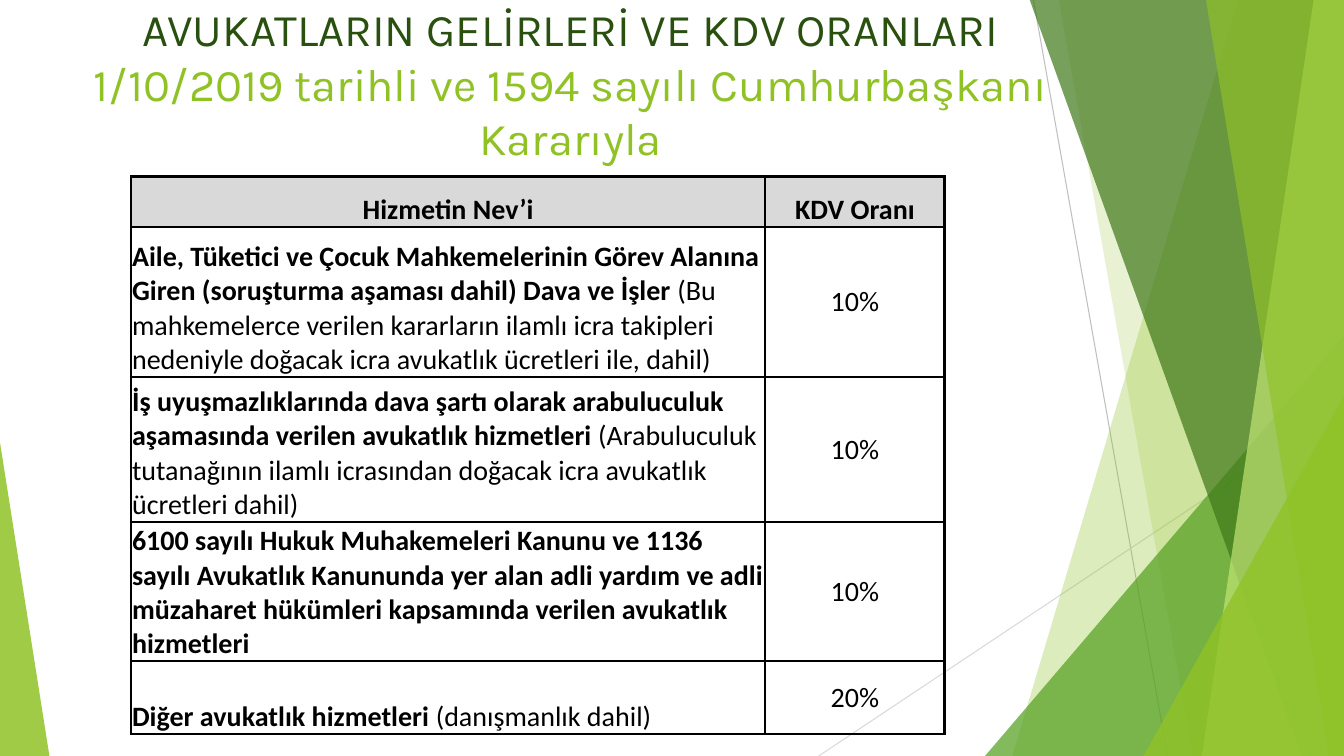
import pptx
import pptx.dml.color
import pptx.enum.shapes
import pptx.enum.text
import pptx.oxml.ns
import pptx.oxml.xmlchemy
import pptx.util

RGBColor = pptx.dml.color.RGBColor
PP_ALIGN = pptx.enum.text.PP_ALIGN
ANCHOR = pptx.enum.text.MSO_ANCHOR

PX = 9144  # 100 px to the inch
WIDTH, HEIGHT = 1333, 750

BLACK = RGBColor(0x00, 0x00, 0x00)
HEADER_GREY = RGBColor(0xD9, 0xD9, 0xD9)
LINE_GREY = RGBColor(0xBF, 0xBF, 0xBF)
LIME = RGBColor(0x90, 0xC2, 0x26)
PALE_LIME = RGBColor(0xC0, 0xE4, 0x74)
GREEN = RGBColor(0x54, 0xA0, 0x21)
FOREST = RGBColor(0x3F, 0x78, 0x19)
DARK_GREEN = RGBColor(0x2A, 0x50, 0x10)

# Content
TITLE_BOX = (74, 0, 984, 165)
TITLE = [
    ("AVUKATLARIN GELİRLERİ VE KDV ORANLARI", DARK_GREEN),
    ("1/10/2019 tarihli ve 1594 sayılı Cumhurbaşkanı Kararıyla", LIME),
]

TABLE_LEFT, TABLE_TOP = 130, 175
COLUMN_WIDTHS = [629, 178]
ROW_HEIGHTS = [50, 149, 144, 138, 72]
HEADER = ("Hizmetin Nev’i", "KDV Oranı")
# Bold part, plain part, rate
SERVICES = [
    ("Aile, Tüketici ve Çocuk Mahkemelerinin Görev Alanına Giren "
     "(soruşturma aşaması dahil) Dava ve İşler ",
     "(Bu mahkemelerce verilen kararların ilamlı icra takipleri nedeniyle "
     "doğacak icra avukatlık ücretleri ile, dahil)", "10%"),
    ("İş uyuşmazlıklarında dava şartı olarak arabuluculuk aşamasında "
     "verilen avukatlık hizmetleri ",
     "(Arabuluculuk tutanağının ilamlı icrasından doğacak icra avukatlık "
     "ücretleri dahil)", "10%"),
    ("6100 sayılı Hukuk Muhakemeleri Kanunu ve 1136 sayılı Avukatlık "
     "Kanununda yer alan adli yardım ve adli müzaharet hükümleri kapsamında "
     "verilen avukatlık hizmetleri", "", "10%"),
    ("Diğer avukatlık hizmetleri ", "(danışmanlık dahil)", "20%"),
]

# Decoration: start, end, colour
LINES = [
    ((1025, 0), (1158, HEIGHT), LINE_GREY),
    ((WIDTH, 403), (812, HEIGHT), HEADER_GREY),
]
# Bands reach the right edge: top x, bottom x, colour, opacity in percent
# Triangles stand on the bottom edge: left, top, width, apex, colour, opacity
FACETS = [
    ("band", (1228, 1004), LIME, 30),
    ("band", (1050, 1183), LIME, 20),
    ("triangle", (977, 333, 356, 1), GREEN, 72),
    ("band", (1021, 1291), FOREST, 70),
    ("band", (1303, 1192), PALE_LIME, 70),
    ("band", (1196, 1318), LIME, 65),
    ("triangle", (1134, 393, 199, 1), LIME, 80),
    ("triangle", (0, 439, 49, 0), LIME, 85),
]


def px(*lengths):
    return [pptx.util.Emu(length * PX) for length in lengths]


def new_element(tag, **attributes):
    element = pptx.oxml.xmlchemy.OxmlElement(tag)
    for name, value in attributes.items():
        element.set(name, str(value))
    return element


def add_text(paragraph, text, font="Calibri", size=20, color=BLACK,
             bold=False, align=PP_ALIGN.LEFT):
    paragraph.alignment = align
    run = paragraph.add_run()
    run.text = text
    run.font.name = font
    run.font.size = pptx.util.Pt(size)
    run.font.color.rgb = color
    run.font.bold = bold


def add_line(slide, start, end, color):
    line = slide.shapes.add_connector(
        pptx.enum.shapes.MSO_CONNECTOR.STRAIGHT, *px(*start, *end))
    line.line.color.rgb = color
    line.line.width = pptx.util.Pt(0.75)
    line.element.spPr.append(new_element("a:effectLst"))


def add_facet(slide, kind, geometry, color, opacity):
    if kind == "band":
        top_x, bottom_x = geometry
        builder = slide.shapes.build_freeform(top_x, -1, scale=PX)
        builder.add_line_segments(
            [(WIDTH, -1), (WIDTH, HEIGHT), (bottom_x, HEIGHT)], close=True)
        shape = builder.convert_to_shape()
    else:
        left, top, width, apex = geometry
        shape = slide.shapes.add_shape(
            pptx.enum.shapes.MSO_SHAPE.ISOSCELES_TRIANGLE,
            *px(left, top, width, HEIGHT - top))
        shape.adjustments[0] = apex
    shape.shadow.inherit = False
    shape.line.fill.background()
    shape.fill.solid()
    shape.fill.fore_color.rgb = color
    color_element = shape.element.spPr.find(".//" + pptx.oxml.ns.qn("a:srgbClr"))
    color_element.append(new_element("a:alpha", val=opacity * 1000))


def format_cell(cell, anchor, fill=None):
    cell.vertical_anchor = anchor
    cell.margin_left, cell.margin_right, cell.margin_top, cell.margin_bottom = px(1, 1, 1, 0)
    properties = cell._tc.get_or_add_tcPr()
    for side in ("a:lnL", "a:lnR", "a:lnT", "a:lnB"):
        border = new_element(side, w=int(pptx.util.Pt(2)))
        solid = new_element("a:solidFill")
        solid.append(new_element("a:srgbClr", val=BLACK))
        border.append(solid)
        properties.append(border)
    if fill is None:
        cell.fill.background()
    else:
        cell.fill.solid()
        cell.fill.fore_color.rgb = fill
    return cell.text_frame.paragraphs[0]


def add_title(slide):
    title = slide.shapes.title
    title.element.getparent().append(title.element)  # in front of the facets
    title.left, title.top, title.width, title.height = px(*TITLE_BOX)
    frame = title.text_frame
    frame.word_wrap = True
    frame.auto_size = pptx.enum.text.MSO_AUTO_SIZE.NONE
    frame.vertical_anchor = ANCHOR.MIDDLE
    paragraph = frame.paragraphs[0]
    for index, (text, color) in enumerate(TITLE):
        if index:
            paragraph.add_line_break()
        add_text(paragraph, text, font="Karla", size=32.4, color=color,
                 align=PP_ALIGN.CENTER)


def add_rate_table(slide):
    table = slide.shapes.add_table(
        len(ROW_HEIGHTS), len(COLUMN_WIDTHS),
        *px(TABLE_LEFT, TABLE_TOP, sum(COLUMN_WIDTHS), sum(ROW_HEIGHTS))).table
    for column, width in zip(table.columns, px(*COLUMN_WIDTHS)):
        column.width = width
    for row, height in zip(table.rows, px(*ROW_HEIGHTS)):
        row.height = height
    for index, text in enumerate(HEADER):
        paragraph = format_cell(table.cell(0, index), ANCHOR.BOTTOM, HEADER_GREY)
        add_text(paragraph, text, bold=True, align=PP_ALIGN.CENTER)
    for index, (service, detail, rate) in enumerate(SERVICES, start=1):
        paragraph = format_cell(table.cell(index, 0), ANCHOR.BOTTOM)
        add_text(paragraph, service, bold=True)
        if detail:
            add_text(paragraph, detail)
        paragraph = format_cell(table.cell(index, 1), ANCHOR.MIDDLE)
        add_text(paragraph, rate, align=PP_ALIGN.CENTER)


def main():
    presentation = pptx.Presentation()
    presentation.slide_width, presentation.slide_height = px(WIDTH, HEIGHT)
    slide = presentation.slides.add_slide(presentation.slide_layouts[5])
    for line in LINES:
        add_line(slide, *line)
    for facet in FACETS:
        add_facet(slide, *facet)
    add_title(slide)
    add_rate_table(slide)
    presentation.save("out.pptx")


if __name__ == "__main__":
    main()
